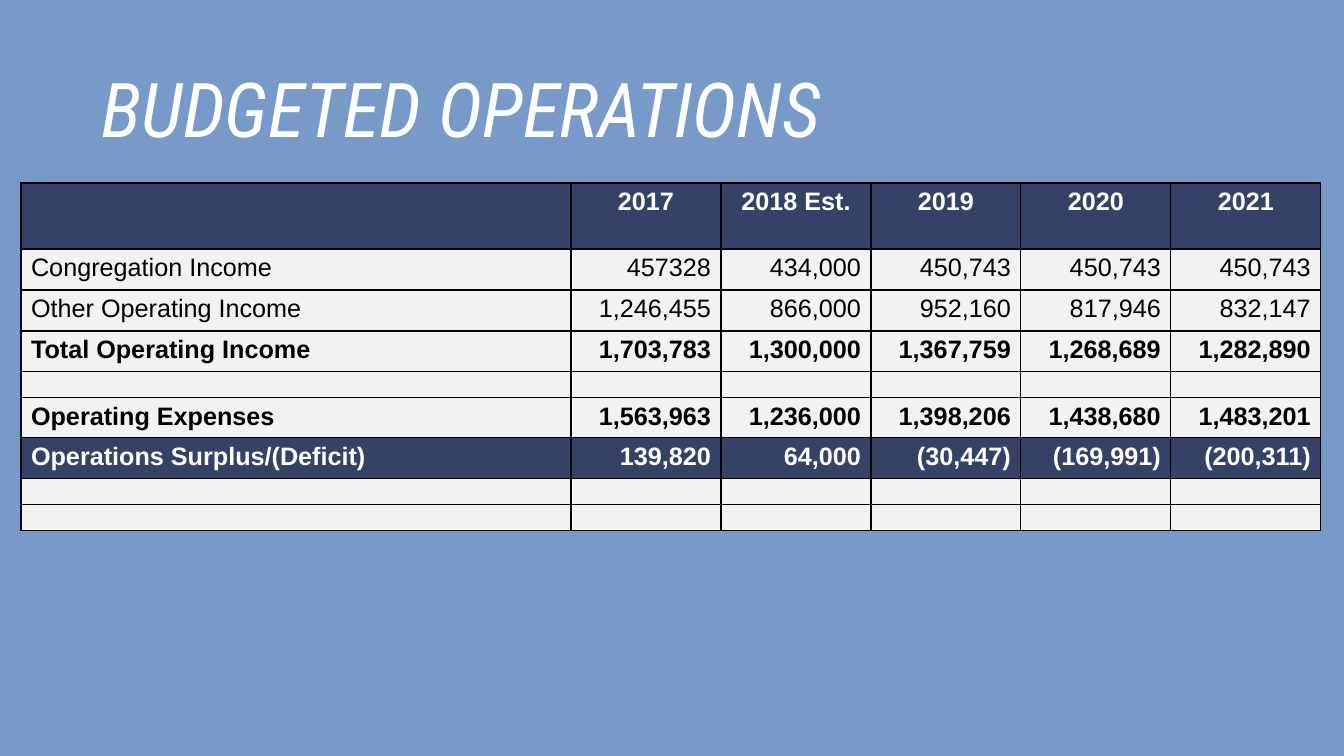
from dataclasses import dataclass

from lxml import etree
from pptx import Presentation
from pptx.dml.color import RGBColor
from pptx.enum.text import MSO_ANCHOR, PP_ALIGN
from pptx.oxml.ns import qn
from pptx.util import Pt

BOTTOM = MSO_ANCHOR.BOTTOM
LEFT, CENTER, RIGHT = PP_ALIGN.LEFT, PP_ALIGN.CENTER, PP_ALIGN.RIGHT
EMU_PER_PIXEL = 914400 / 100.8


@dataclass(frozen=True)
class Theme:
    background: str = "789AC8"
    navy: str = "354166"
    pale: str = "F2F2F2"
    white: str = "FFFFFF"
    black: str = "000000"
    title_font: str = "Roboto Condensed"
    body_font: str = "Arial"
    title_size: int = 54
    body_size: int = 18
    spacer_size: int = 9
    border_width: int = 1


HEADER, PLAIN, TOTAL, RESULT = "header", "plain", "total", "result"
COLUMN_WIDTHS = [550] + [150] * 5
BUDGET_ROWS = [
    (66, HEADER, ["", "2017", "2018 Est.", "2019", "2020", "2021"]),
    (41, PLAIN, ["Congregation Income", "457328", "434,000", "450,743", "450,743", "450,743"]),
    (41, PLAIN, ["Other Operating Income", "1,246,455", "866,000", "952,160", "817,946", "832,147"]),
    (40, TOTAL, ["Total Operating Income", "1,703,783", "1,300,000", "1,367,759", "1,268,689", "1,282,890"]),
    (26, PLAIN, [""] * 6),
    (40, TOTAL, ["Operating Expenses", "1,563,963", "1,236,000", "1,398,206", "1,438,680", "1,483,201"]),
    (41, RESULT, ["Operations Surplus/(Deficit)", "139,820", "64,000", "(30,447)", "(169,991)", "(200,311)"]),
    (26, PLAIN, [""] * 6),
    (26, PLAIN, [""] * 6),
]


def px(length):
    return round(length * EMU_PER_PIXEL)


class SlideBuilder:
    def __init__(self, slide, theme):
        self.slide = slide
        self.theme = theme

    def background(self):
        fill = self.slide.background.fill
        fill.solid()
        fill.fore_color.rgb = RGBColor.from_string(self.theme.background)

    def style(self, paragraph, font_name, size, color, bold=False, italic=False):
        font = paragraph.font
        font.name = font_name
        font.size = Pt(size)
        font.bold = bold
        font.italic = italic
        font.color.rgb = RGBColor.from_string(color)

    def title(self, text, left, top, width, height):
        shape = self.slide.shapes.add_textbox(px(left), px(top), px(width), px(height))
        frame = shape.text_frame
        frame.word_wrap = True
        frame.vertical_anchor = BOTTOM
        paragraph = frame.paragraphs[0]
        paragraph.text = text
        paragraph.line_spacing = 0.9
        theme = self.theme
        self.style(paragraph, theme.title_font, theme.title_size, theme.white, italic=True)

    def borders(self, cell):
        properties = cell._tc.get_or_add_tcPr()
        for side in ("a:lnL", "a:lnR", "a:lnT", "a:lnB"):
            line = etree.SubElement(properties, qn(side), w=str(Pt(self.theme.border_width)))
            fill = etree.SubElement(line, qn("a:solidFill"))
            etree.SubElement(fill, qn("a:srgbClr"), val=self.theme.black)

    def cell(self, cell, text, kind, alignment):
        theme = self.theme
        dark = kind in (HEADER, RESULT)
        self.borders(cell)
        cell.fill.solid()
        cell.fill.fore_color.rgb = RGBColor.from_string(theme.navy if dark else theme.pale)
        paragraph = cell.text_frame.paragraphs[0]
        if not text:
            etree.SubElement(paragraph._p, qn("a:endParaRPr"), sz=str(theme.spacer_size * 100))
            return
        paragraph.text = text
        paragraph.alignment = alignment
        color = theme.white if dark else theme.black
        self.style(paragraph, theme.body_font, theme.body_size, color, bold=kind != PLAIN)

    def table(self, rows, column_widths, left, top):
        width = sum(column_widths)
        height = sum(row_height for row_height, _, _ in rows)
        table = self.slide.shapes.add_table(
            len(rows), len(column_widths), px(left), px(top), px(width), px(height)
        ).table
        for column, column_width in zip(table.columns, column_widths):
            column.width = px(column_width)
        for row, (row_height, kind, texts) in zip(table.rows, rows):
            row.height = px(row_height)
            for index, (cell, text) in enumerate(zip(row.cells, texts)):
                number_alignment = CENTER if kind == HEADER else RIGHT
                self.cell(cell, text, kind, number_alignment if index else LEFT)


def main():
    presentation = Presentation()
    presentation.slide_width = px(1344)
    presentation.slide_height = px(756)
    slide = presentation.slides.add_slide(presentation.slide_layouts[6])
    builder = SlideBuilder(slide, Theme())
    builder.background()
    builder.title("BUDGETED OPERATIONS", 92, 71, 1159, 88)
    builder.table(BUDGET_ROWS, COLUMN_WIDTHS, 21, 183)
    presentation.save("out.pptx")


if __name__ == "__main__":
    main()
